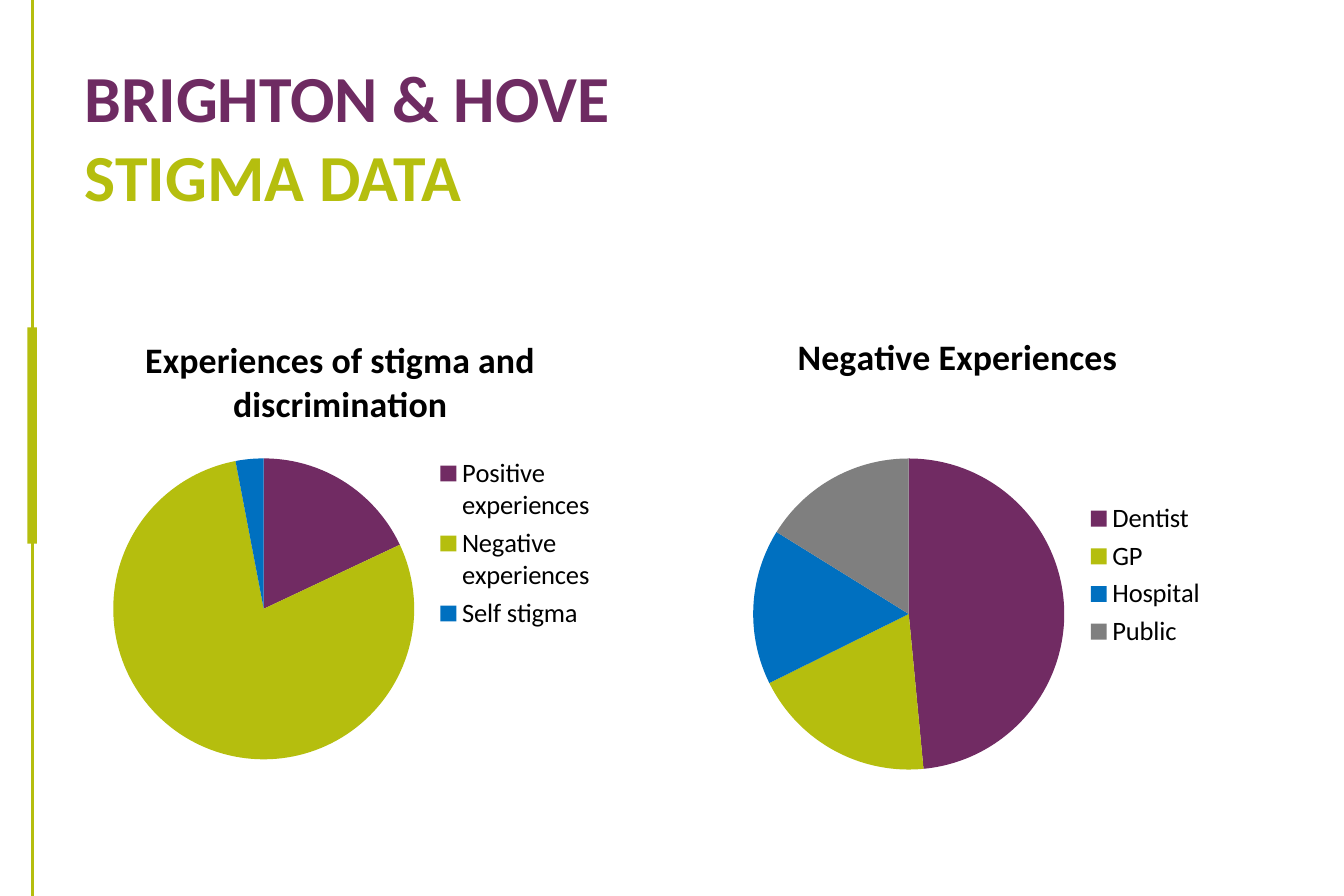
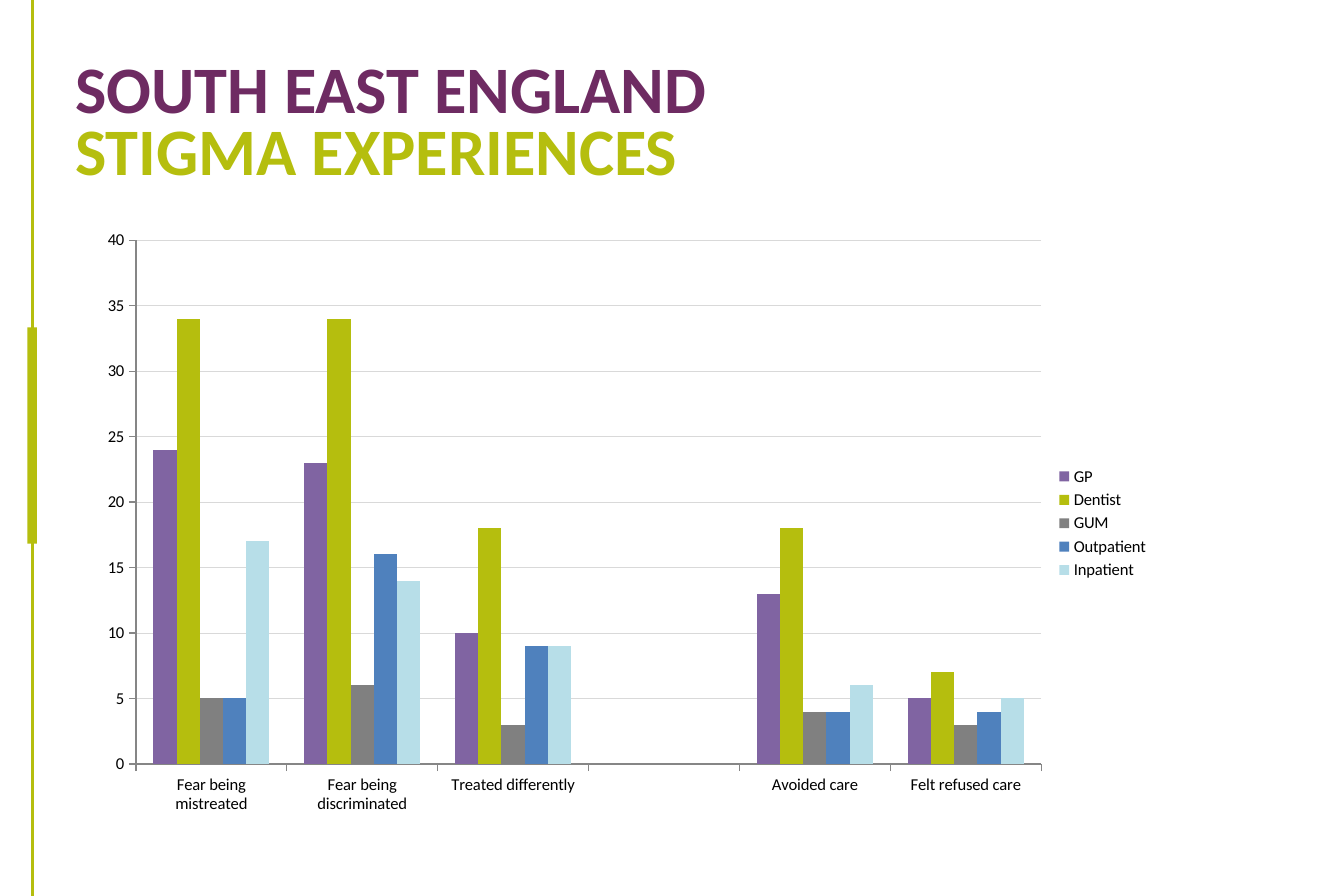
from lxml import etree
from pptx import Presentation
from pptx.chart.data import CategoryChartData
from pptx.dml.color import RGBColor
from pptx.enum.chart import XL_CHART_TYPE, XL_LEGEND_POSITION, XL_TICK_MARK
from pptx.enum.shapes import MSO_CONNECTOR, MSO_SHAPE
from pptx.enum.text import MSO_ANCHOR, MSO_AUTO_SIZE, PP_ALIGN
from pptx.oxml.ns import qn
from pptx.util import Inches, Pt

PIE = XL_CHART_TYPE.PIE
COLUMNS = XL_CHART_TYPE.COLUMN_CLUSTERED
RIGHT = XL_LEGEND_POSITION.RIGHT
TICK_OUT = XL_TICK_MARK.OUTSIDE
STRAIGHT = MSO_CONNECTOR.STRAIGHT
RECTANGLE = MSO_SHAPE.RECTANGLE

FONT = "Calibri"
TITLE_ONLY_LAYOUT = 5
COLORS = {
    "plum": "6E2B62",
    "pie_plum": "712B63",
    "lime": "B5BE0E",
    "blue": "0070C0",
    "pie_gray": "7F7F7F",
    "violet": "8064A2",
    "gray": "808080",
    "steel": "4F81BD",
    "pale_blue": "B7DEE8",
    "grid": "D9D9D9",
    "axis": "868686",
    "black": "000000",
}
PIE_COLORS = ["pie_plum", "lime", "blue", "pie_gray"]

PIES = [
    {
        "title": "Experiences of stigma and discrimination",
        "box": (0.82, 2.17, 4.27, 4.76),
        "title_layout": {"x": 0.08, "y": 0.12},
        "plot_layout": {"x": 0.03, "y": 0.35, "w": 0.59, "h": 0.53},
        "values": {"Positive experiences": 18, "Negative experiences": 79, "Self stigma": 3},
    },
    {
        "title": "Negative Experiences",
        "box": (6.18, 2.49, 4.02, 4.65),
        "title_layout": {"x": 0.11, "y": 0.05},
        "plot_layout": {"x": 0.03, "y": 0.29, "w": 0.65, "h": 0.56},
        "values": {"Dentist": 48, "GP": 19, "Hospital": 16, "Public": 16},
    },
]

EXPERIENCES = ["Fear being mistreated", "Fear being discriminated",
               "Treated differently", "", "Avoided care", "Felt refused care"]
SERVICES = {
    "GP": ("violet", [24, 23, 10, None, 13, 5]),
    "Dentist": ("lime", [34, 34, 18, None, 18, 7]),
    "GUM": ("gray", [5, 6, 3, None, 4, 3]),
    "Outpatient": ("steel", [5, 16, 9, None, 4, 4]),
    "Inpatient": ("pale_blue", [17, 14, 9, None, 6, 5]),
}


def color(name):
    return RGBColor.from_string(COLORS[name])


def fill_solid(target, name):
    target.fill.solid()
    target.fill.fore_color.rgb = color(name)


def style_font(font, color_name, **values):
    font.color.rgb = color(color_name)
    for attribute, value in {"name": FONT, **values}.items():
        setattr(font, attribute, value)


def style_line(line, name, width):
    line.color.rgb = color(name)
    line.width = Pt(width)


def add_side_rail(slide):
    rail = slide.shapes.add_connector(
        STRAIGHT, Inches(0.27), 0, Inches(0.27), Inches(7.5))
    style_line(rail.line, "lime", 1.75)
    etree.SubElement(rail._element.spPr, qn("a:effectLst"))
    marker = slide.shapes.add_shape(
        RECTANGLE, *map(Inches, (0.23, 2.74, 0.08, 1.81)))
    marker.shadow.inherit = False
    fill_solid(marker, "lime")
    marker.line.fill.background()


def set_title(slide, lines, left, top, size, line_spacing):
    """Write the two title lines, plum above lime, in one paragraph."""
    title = slide.shapes.title
    box = {"left": left, "top": top, "width": 10.12, "height": 1.25}
    for attribute, value in box.items():
        setattr(title, attribute, Inches(value))
    frame = title.text_frame
    frame_format = {
        "word_wrap": True,
        "auto_size": MSO_AUTO_SIZE.NONE,
        "vertical_anchor": MSO_ANCHOR.MIDDLE,
        "margin_left": Inches(0.12),
        "margin_right": Inches(0.12),
        "margin_top": Inches(0.06),
        "margin_bottom": Inches(0.06),
    }
    for attribute, value in frame_format.items():
        setattr(frame, attribute, value)
    paragraph = frame.paragraphs[0]
    paragraph.alignment = PP_ALIGN.LEFT
    paragraph.line_spacing = line_spacing
    for index, (text, name) in enumerate(zip(lines, ("plum", "lime"))):
        if index:
            paragraph.add_line_break()
        run = paragraph.add_run()
        run.text = text
        style_font(run.font, name, size=Pt(size), bold=True)


def add_titled_slide(presentation, *title_values):
    slide = presentation.slides.add_slide(presentation.slide_layouts[TITLE_ONLY_LAYOUT])
    set_title(slide, *title_values)
    add_side_rail(slide)
    return slide


def set_layout(element, index, fractions, inner=False):
    """Place a chart part by fractions of the chart's width and height."""
    for old_layout in element.findall(qn("c:layout")):
        element.remove(old_layout)
    layout = etree.Element(qn("c:layout"))
    manual = etree.SubElement(layout, qn("c:manualLayout"))
    settings = {"layoutTarget": "inner"} if inner else {}
    settings.update({"xMode": "edge", "yMode": "edge"})
    settings.update(fractions)
    for tag, value in settings.items():
        etree.SubElement(manual, qn(f"c:{tag}")).set("val", str(value))
    element.insert(index, layout)


def add_chart(slide, kind, box, categories, series, font_size, legend_size, plot_layout):
    data = CategoryChartData()
    data.categories = categories
    for name, values in series.items():
        data.add_series(name, values)
    chart = slide.shapes.add_chart(kind, *map(Inches, box), data).chart
    style_font(chart.font, "black", size=Pt(font_size))
    chart.has_title = False
    chart.has_legend = True
    chart.legend.position = RIGHT
    chart.legend.include_in_layout = False
    style_font(chart.legend.font, "black", size=Pt(legend_size))
    set_layout(chart._chartSpace.chart.plotArea, 0, plot_layout, inner=True)
    return chart


def add_pie(slide, pie):
    values = pie["values"]
    chart = add_chart(slide, PIE, pie["box"], list(values),
                      {pie["title"]: list(values.values())}, 18, 16, pie["plot_layout"])
    chart.has_title = True
    paragraph = chart.chart_title.text_frame.paragraphs[0]
    run = paragraph.add_run()
    run.text = pie["title"]
    style_font(run.font, "black", size=Pt(21.6), bold=True)
    set_layout(chart._chartSpace.chart.find(qn("c:title")), 1, pie["title_layout"])
    points = chart.plots[0].series[0].points
    for index, name in enumerate(PIE_COLORS[:len(values)]):
        fill_solid(points[index].format, name)


def add_experience_columns(slide):
    chart = add_chart(slide, COLUMNS, (0.59, 1.86, 9.13, 5.04), EXPERIENCES,
                      {name: values for name, (_, values) in SERVICES.items()}, 10, 10,
                      {"x": 0.06, "y": 0.03, "w": 0.83, "h": 0.87})
    plot = chart.plots[0]
    for attribute, value in {"gap_width": 150, "overlap": 0, "vary_by_categories": False}.items():
        setattr(plot, attribute, value)
    for series, (name, _) in zip(plot.series, SERVICES.values()):
        fill_solid(series.format, name)
        series.invert_if_negative = False
    for axis in (chart.category_axis, chart.value_axis):
        axis.major_tick_mark = TICK_OUT
        style_line(axis.format.line, "axis", 0.75)
        style_font(axis.tick_labels.font, "black", size=Pt(10))
    scale = {"minimum_scale": 0, "maximum_scale": 40, "major_unit": 5,
             "has_major_gridlines": True}
    for attribute, value in scale.items():
        setattr(chart.value_axis, attribute, value)
    style_line(chart.value_axis.major_gridlines.format.line, "grid", 0.25)


def main():
    presentation = Presentation()
    presentation.slide_width = Inches(11.25)
    presentation.slide_height = Inches(7.5)

    local_slide = add_titled_slide(
        presentation, ("BRIGHTON & HOVE", "STIGMA DATA"), 0.59, 0.51, 39.6, 1.0)
    for pie in PIES:
        add_pie(local_slide, pie)

    regional_slide = add_titled_slide(
        presentation, ("SOUTH EAST ENGLAND", "STIGMA EXPERIENCES"), 0.51, 0.44, 40, Pt(37))
    add_experience_columns(regional_slide)

    presentation.save("out.pptx")


if __name__ == "__main__":
    main()
